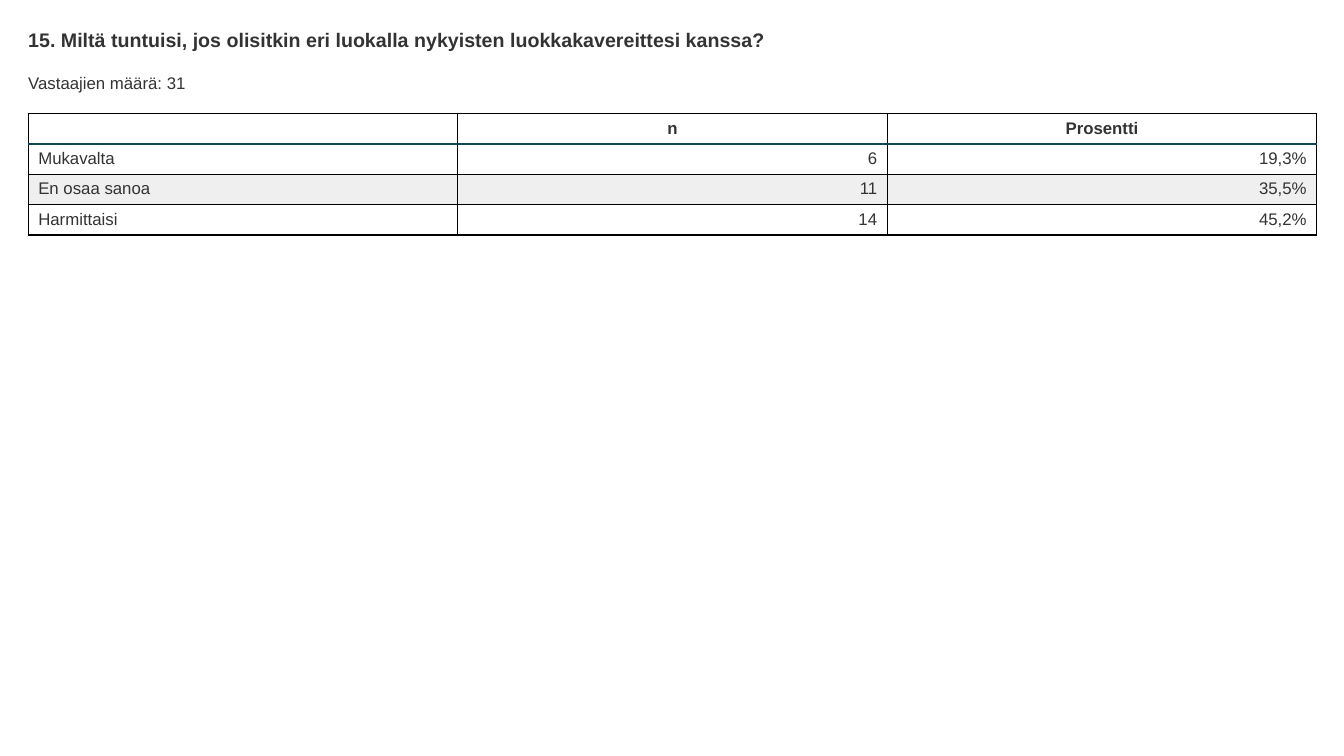
from lxml.etree import SubElement
from pptx import Presentation
from pptx.dml.color import RGBColor
from pptx.enum.text import PP_ALIGN as Align
from pptx.oxml.ns import qn
from pptx.util import Inches, Pt

THEME = {
    "font": "Arial", "text": "333333", "band": "EFEFEF",
    "grid": "000000", "header_rule": "124456",
    "title_size": 14, "body_size": 12, "grid_width": 1, "header_width": 2,
}

deck = Presentation()
deck.slide_width, deck.slide_height = Inches(13.33), Inches(7.5)
slide = deck.slides.add_slide(deck.slide_layouts[6])

margin = Inches(0.28)
content_width = Inches(12.78)
row_height = Inches(0.3)


def style_text(paragraph, size, bold):
    for run in paragraph.runs:
        run.font.name = THEME["font"]
        run.font.size = Pt(size)
        run.font.bold = bold
        run.font.color.rgb = RGBColor.from_string(THEME["text"])


def add_border(cell, side, color, width):
    line = SubElement(cell._tc.get_or_add_tcPr(), qn(f"a:{side}"), w=str(Pt(width)))
    SubElement(SubElement(line, qn("a:solidFill")), qn("a:srgbClr"), val=color)


# Question and number of respondents
headings = [
    ("15. Miltä tuntuisi, jos olisitkin eri luokalla nykyisten luokkakavereittesi kanssa?",
     0.28, 0.23, THEME["title_size"], True),
    ("Vastaajien määrä: 31", 0.72, 0.2, THEME["body_size"], False),
]
for wording, top, height, size, bold in headings:
    heading = slide.shapes.add_textbox(margin, Inches(top), content_width, Inches(height))
    frame = heading.text_frame
    frame.word_wrap = True
    frame.margin_left = frame.margin_right = frame.margin_top = frame.margin_bottom = 0
    frame.text = wording
    style_text(frame.paragraphs[0], size, bold)

# Answer table
answers = [
    ("", "n", "Prosentti"),
    ("Mukavalta", "6", "19,3%"),
    ("En osaa sanoa", "11", "35,5%"),
    ("Harmittaisi", "14", "45,2%"),
]
answer_table = slide.shapes.add_table(
    len(answers), len(answers[0]), margin, Inches(1.13),
    content_width, row_height * len(answers)).table
answer_table.horz_banding = False

for row, values in enumerate(answers):
    answer_table.rows[row].height = row_height
    for column, value in enumerate(values):
        cell = answer_table.cell(row, column)
        cell.text = value
        paragraph = cell.text_frame.paragraphs[0]
        if row == 0:
            paragraph.alignment = Align.CENTER
        else:
            paragraph.alignment = Align.RIGHT if column else Align.LEFT
        style_text(paragraph, THEME["body_size"], row == 0)
        if not value:  # keeps the empty header cell as low as the others
            SubElement(paragraph._p, qn("a:endParaRPr"), sz=str(THEME["body_size"] * 100))

        # Grid lines, with a heavier rule between header and answers
        for side in ("lnL", "lnR", "lnT", "lnB"):
            if (row, side) in ((0, "lnB"), (1, "lnT")):
                add_border(cell, side, THEME["header_rule"], THEME["header_width"])
            else:
                add_border(cell, side, THEME["grid"], THEME["grid_width"])

        # Every second answer is shaded
        if row and row % 2 == 0:
            cell.fill.solid()
            cell.fill.fore_color.rgb = RGBColor.from_string(THEME["band"])
        else:
            cell.fill.background()

deck.save("out.pptx")
